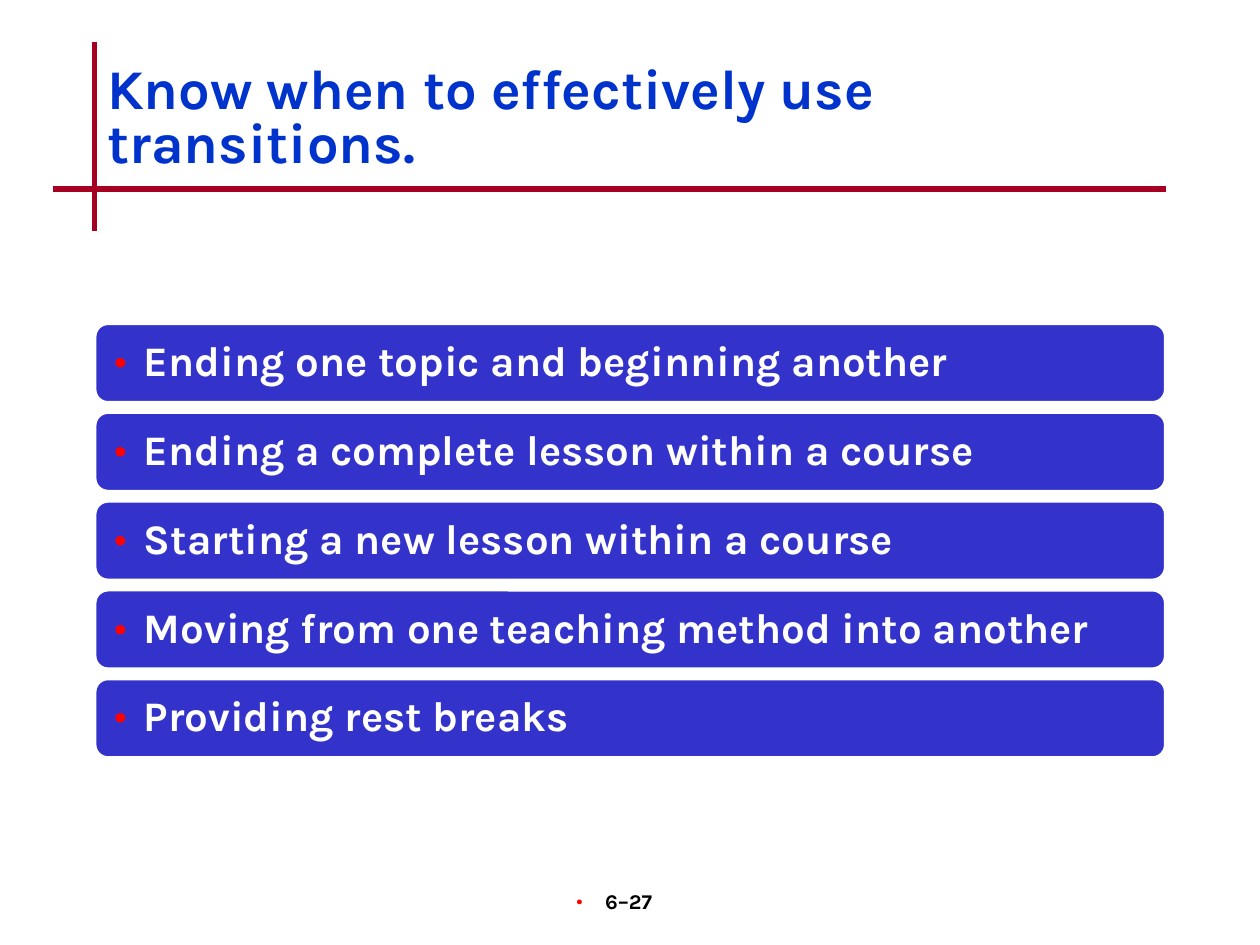
from lxml import etree
from pptx import Presentation
from pptx import util as u
from pptx.dml.color import RGBColor
from pptx.enum import shapes, text
from pptx.oxml.ns import qn

HUES = {"title": "0033CC", "rule": "A50021", "bar": "3333CC",
        "white": "FFFFFF", "dot": "FF0000", "page": "000000"}


def hue(name):
    return RGBColor.from_string(HUES[name])


def write(shape, words, size, color, frame, para, dot=False):
    body = shape.text_frame
    for key, val in frame.items():
        setattr(body, key, val)
    line = body.paragraphs[0]
    line.text = words
    for key, val in para.items():
        setattr(line, key, val)
    if dot:
        props = line._p.get_or_add_pPr()
        props.set("marL", str(u.Cm(0.58)))
        props.set("indent", str(u.Cm(-0.58)))
        tint = etree.SubElement(props, qn("a:buClr"))
        etree.SubElement(tint, qn("a:srgbClr"), val=HUES["dot"])
        etree.SubElement(props, qn("a:buSzPct"), val="110000")
        etree.SubElement(props, qn("a:buFont"), typeface="Karla")
        etree.SubElement(props, qn("a:buChar"), char="•")
    font = line.runs[0].font
    for key, val in {"name": "Karla", "size": u.Pt(size), "bold": True}.items():
        setattr(font, key, val)
    font.color.rgb = hue(color)


deck = Presentation()
deck.slide_width, deck.slide_height = u.Cm(25.4), u.Cm(19.05)
slide = deck.slides.add_slide(deck.slide_layouts[6])
items = slide.shapes

for ends in [(1.91, 0.84, 1.91, 4.65), (1.07, 3.81, 23.5, 3.81)]:
    rule = items.add_connector(shapes.MSO_CONNECTOR.STRAIGHT, *map(u.Cm, ends))
    rule.line.color.rgb = hue("rule")
    rule.line.width = u.Pt(3)
    etree.SubElement(rule._element.spPr, qn("a:effectLst"))

topics = ["Ending one topic and beginning another",
          "Ending a complete lesson within a course",
          "Starting a new lesson within a course",
          "Moving from one teaching method into another",
          "Providing rest breaks"]
middle = {"word_wrap": True, "vertical_anchor": text.MSO_ANCHOR.MIDDLE}
inset = {"margin_left": u.Cm(0.33), "margin_right": u.Cm(0.33)}
left = {"alignment": text.PP_ALIGN.LEFT, "line_spacing": 0.9}
for row, topic in enumerate(topics):
    bar = items.add_shape(shapes.MSO_SHAPE.ROUNDED_RECTANGLE, u.Cm(1.91),
                          u.Cm(6.52 + 1.79 * row), u.Cm(21.59), u.Cm(1.6))
    bar.shadow.inherit = False
    bar.fill.solid()
    bar.fill.fore_color.rgb = hue("bar")
    bar.line.color.rgb = hue("white")
    bar.line.width = u.Pt(2)
    write(bar, topic, 24, "white", {**middle, **inset}, left, True)

title = items.add_textbox(u.Cm(1.91), u.Cm(0.84), u.Cm(21.59), u.Cm(3.18))
write(title, "Know when to effectively use transitions.", 32, "title",
      middle, {"line_spacing": 0.8})

page = items.add_textbox(u.Cm(9.96), u.Cm(17.78), u.Cm(5.28), u.Cm(1.27))
write(page, "6–27", 12, "page", {"word_wrap": True, "margin_right": u.Cm(0.68)},
      {"alignment": text.PP_ALIGN.CENTER}, True)

deck.save("out.pptx")
